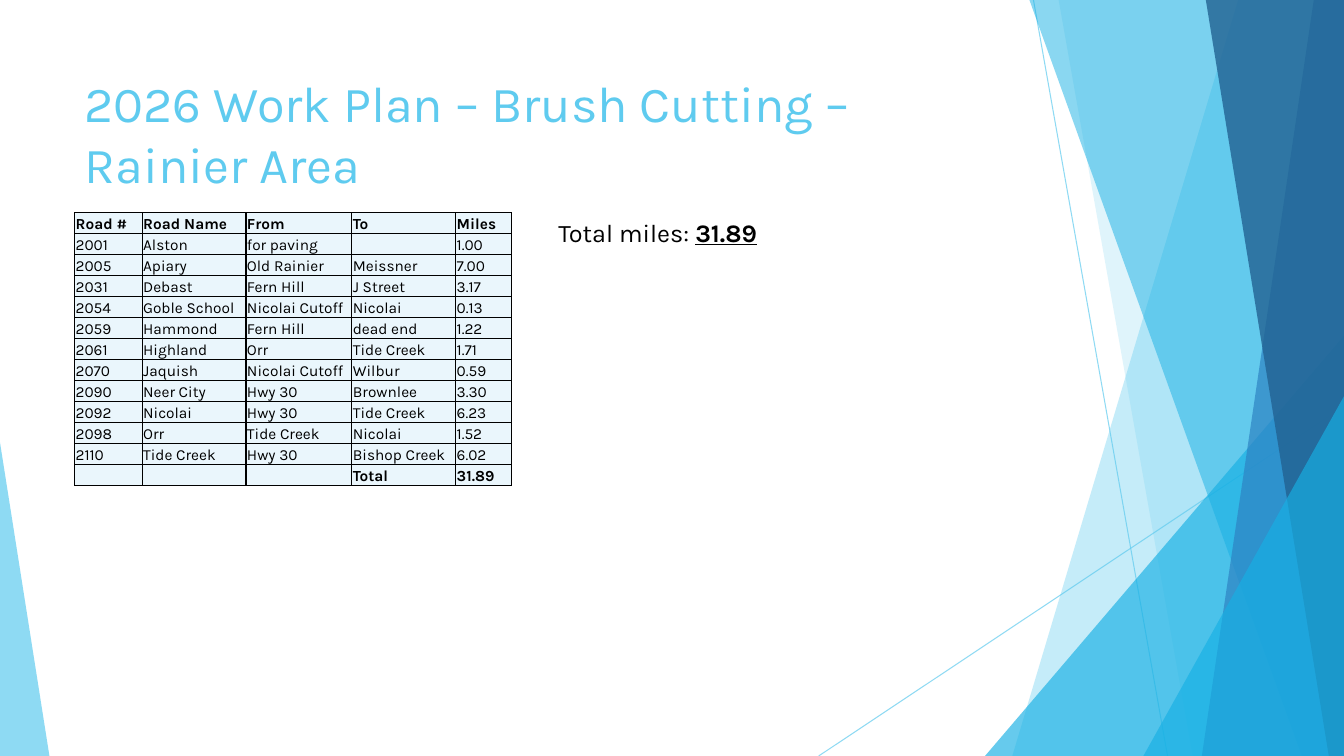
from lxml.etree import SubElement
from pptx import Presentation
from pptx.dml.color import RGBColor
from pptx.enum.shapes import MSO_CONNECTOR, MSO_SHAPE
from pptx.enum.text import MSO_ANCHOR, MSO_AUTO_SIZE, PP_ALIGN
from pptx.oxml.ns import qn
from pptx.util import Inches, Pt

FONT = "Karla"
WIDE, HIGH = 13.33, 7.5
HUES = {"sky": "5FCBEF", "cyan": "17B0E4", "blue": "2E83C3", "navy": "226292",
        "cell": "EAF6FC", "ink": "000000"}

TITLE = ["2026 Work Plan – Brush Cutting –", "Rainier Area"]
TOTAL = "31.89"
ROADS = [
    ("Road #", "Road Name", "From", "To", "Miles"),
    ("2001", "Alston", "for paving", "", "1.00"),
    ("2005", "Apiary", "Old Rainier", "Meissner", "7.00"),
    ("2031", "Debast", "Fern Hill", "J Street", "3.17"),
    ("2054", "Goble School", "Nicolai Cutoff", "Nicolai", "0.13"),
    ("2059", "Hammond", "Fern Hill", "dead end", "1.22"),
    ("2061", "Highland", "Orr", "Tide Creek", "1.71"),
    ("2070", "Jaquish", "Nicolai Cutoff", "Wilbur", "0.59"),
    ("2090", "Neer City", "Hwy 30", "Brownlee", "3.30"),
    ("2092", "Nicolai", "Hwy 30", "Tide Creek", "6.23"),
    ("2098", "Orr", "Tide Creek", "Nicolai", "1.52"),
    ("2110", "Tide Creek", "Hwy 30", "Bishop Creek", "6.02"),
    ("", "", "", "Total", TOTAL),
]
COLS = [0.67, 1.03, 1.05, 1.03, 0.55]
ROW = 2.71 / len(ROADS)

# Thin rays: start, end
RAYS = [((10.25, 0), (11.58, HIGH)), ((WIDE, 4.03), (8.12, HIGH))]
# Slices reach the right edge: top x, bottom x.
# Wedges stand on the bottom edge: left, top, width, apex (0 left, 1 right).
SHARDS = [
    ((12.28, 10.04), "sky", 36),
    ((10.5, 11.83), "sky", 20),
    ((9.77, 3.33, 3.56, 1), "cyan", 66),
    ((10.21, 12.91), "cyan", 50),
    ((13.03, 11.92), "blue", 70),
    ((11.96, 13.18), "navy", 80),
    ((11.34, 3.93, 1.99, 1), "cyan", 66),
    ((0, 4.39, 0.49, 0), "sky", 70),
]


def paint(fill, hue, alpha=100):
    fill.solid()
    fill.fore_color.rgb = RGBColor.from_string(HUES[hue])
    if alpha < 100:
        color = fill._xPr.find(".//" + qn("a:srgbClr"))
        SubElement(color, qn("a:alpha"), val=str(alpha * 1000))


def write(para, text, size, hue="ink", bold=False, under=False):
    run = para.add_run()
    run.text = text
    font = run.font
    font.name, font.size, font.bold, font.underline = FONT, Pt(size), bold, under
    font.color.rgb = RGBColor.from_string(HUES[hue])


def add_ray(shapes, start, end):
    ray = shapes.add_connector(MSO_CONNECTOR.STRAIGHT, *map(Inches, start + end))
    ray.line.width = Pt(0.75)
    paint(ray.line.fill, "sky", 70)
    SubElement(ray._element.spPr, qn("a:effectLst"))


def add_shard(shapes, place, hue, alpha):
    if len(place) == 2:
        top, base = place
        pen = shapes.build_freeform(Inches(top), 0)
        pen.add_line_segments([(Inches(x), Inches(y)) for x, y in
                               [(WIDE, 0), (WIDE, HIGH), (base, HIGH)]])
        shard = pen.convert_to_shape()
    else:
        left, top, width, apex = place
        shard = shapes.add_shape(MSO_SHAPE.ISOSCELES_TRIANGLE, Inches(left),
                                 Inches(top), Inches(width), Inches(HIGH - top))
        shard.adjustments[0] = apex
    shard.shadow.inherit = False
    shard.line.fill.background()
    paint(shard.fill, hue, alpha)


def set_cell(cell, text, bold):
    cell.margin_left = cell.margin_right = cell.margin_top = Inches(0.01)
    cell.margin_bottom = 0
    cell.vertical_anchor = MSO_ANCHOR.BOTTOM
    props = cell._tc.get_or_add_tcPr()
    for side in ("lnL", "lnR", "lnT", "lnB"):
        edge = SubElement(props, qn("a:" + side), w=str(Pt(1)))
        solid = SubElement(edge, qn("a:solidFill"))
        SubElement(solid, qn("a:srgbClr"), val=HUES["ink"])
    paint(cell.fill, "cell")
    para = cell.text_frame.paragraphs[0]
    if text:
        write(para, text, 11, bold=bold)
    else:
        SubElement(para._p, qn("a:endParaRPr"), sz="1100")


def add_roads(shapes):
    frame = shapes.add_table(len(ROADS), len(COLS), Inches(0.74), Inches(2.11),
                             Inches(sum(COLS)), Inches(ROW * len(ROADS)))
    table = frame.table
    for col, width in zip(table.columns, COLS):
        col.width = Inches(width)
    for r, road in enumerate(ROADS):
        table.rows[r].height = Inches(ROW)
        for c, text in enumerate(road):
            set_cell(table.cell(r, c), text, r in (0, len(ROADS) - 1))


def set_title(title):
    title.left, title.top = Inches(0.74), Inches(0.67)
    title.width, title.height = Inches(9.4), Inches(1.44)
    frame = title.text_frame
    frame.word_wrap = True
    frame.auto_size = MSO_AUTO_SIZE.NONE
    frame.vertical_anchor = MSO_ANCHOR.TOP
    para = frame.paragraphs[0]
    para.alignment = PP_ALIGN.LEFT
    for i, line in enumerate(TITLE):
        if i:
            para.add_line_break()
        write(para, line, 36, "sky")


def add_total(shapes):
    box = shapes.add_textbox(Inches(5.44), Inches(2.11), Inches(2.3), Inches(0.4))
    frame = box.text_frame
    frame.word_wrap = True
    frame.auto_size = MSO_AUTO_SIZE.SHAPE_TO_FIT_TEXT
    para = frame.paragraphs[0]
    write(para, "Total miles: ", 18)
    write(para, TOTAL, 18, bold=True, under=True)


def main():
    deck = Presentation()
    deck.slide_width, deck.slide_height = Inches(WIDE), Inches(HIGH)
    shapes = deck.slides.add_slide(deck.slide_layouts[5]).shapes
    for start, end in RAYS:
        add_ray(shapes, start, end)
    for place, hue, alpha in SHARDS:
        add_shard(shapes, place, hue, alpha)
    set_title(shapes.title)
    add_roads(shapes)
    add_total(shapes)
    deck.save("out.pptx")


if __name__ == "__main__":
    main()
